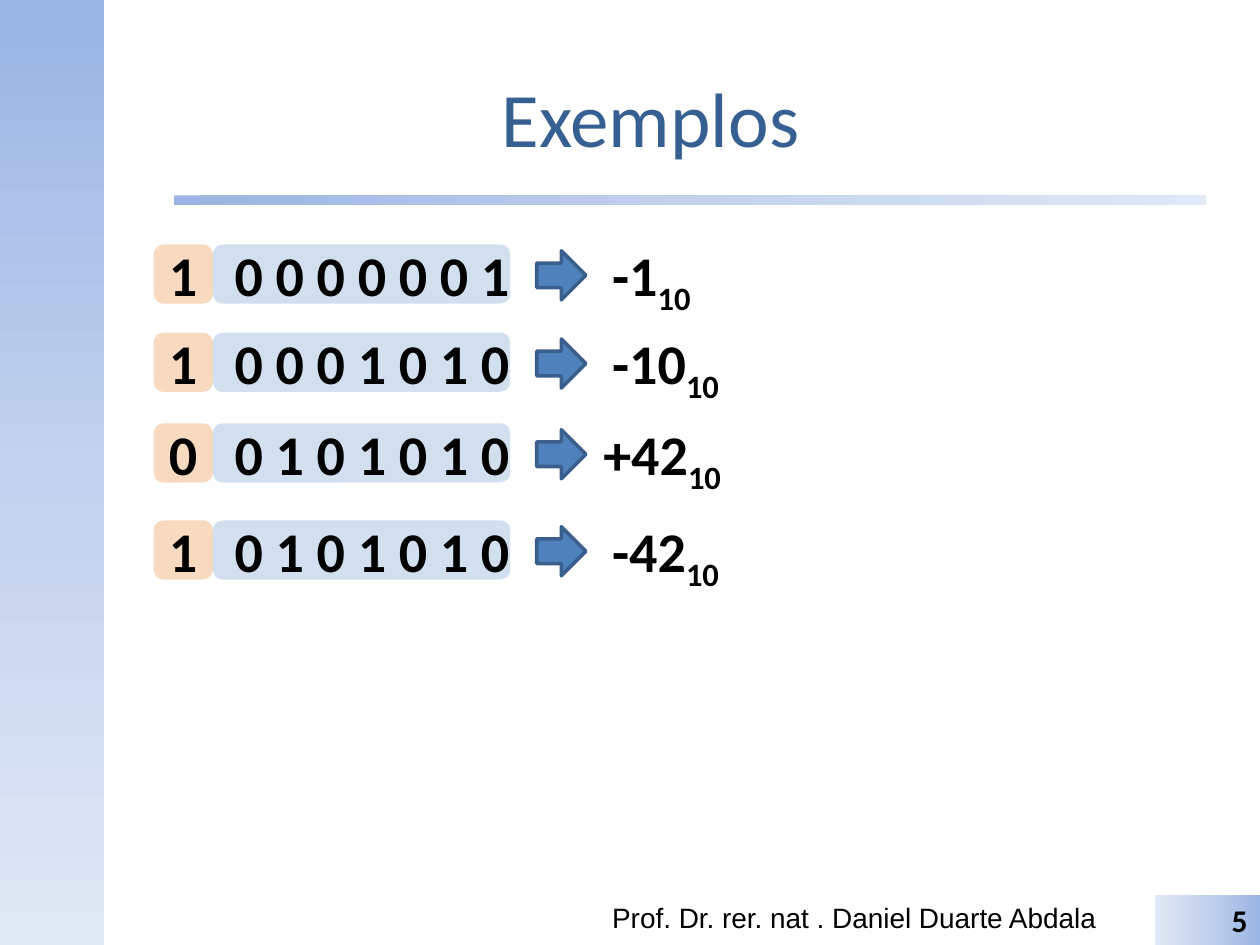
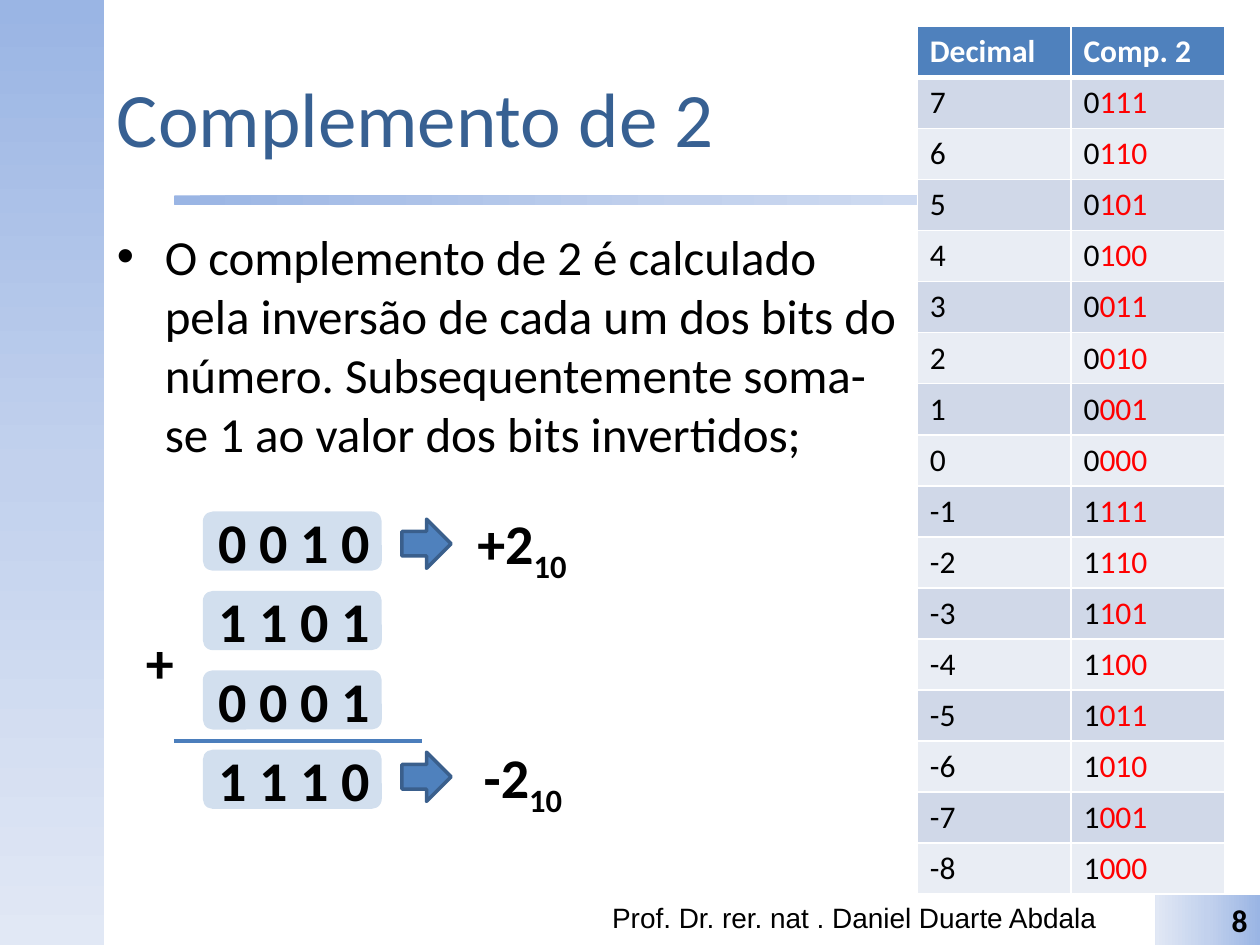
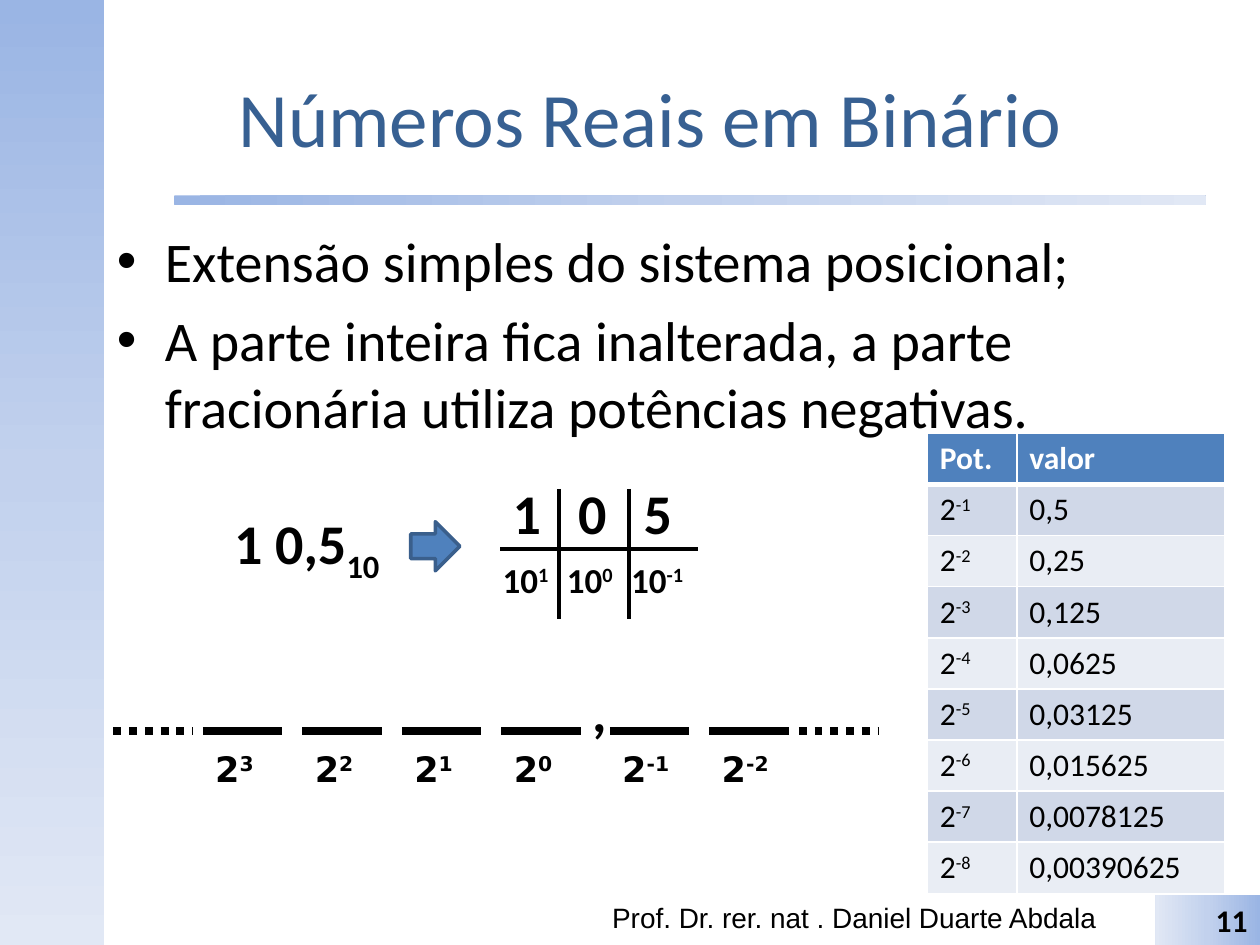
from collections import namedtuple
from dataclasses import dataclass

from pptx import Presentation
from pptx.dml.color import RGBColor as RGB
from pptx.enum.dml import MSO_LINE as Dash
from pptx.enum.shapes import MSO_CONNECTOR as Link, MSO_SHAPE as Form
from pptx.enum.text import MSO_ANCHOR as Anchor, PP_ALIGN as Align
from pptx.oxml import parse_xml
from pptx.oxml.ns import nsdecls, qn
from pptx.util import Inches, Pt

Box = namedtuple("Box", "left top width height")
Style = namedtuple("Style", "size color bold font", defaults=("000000", False, "Calibri"))
Piece = namedtuple("Piece", "text baseline color", defaults=(0, None))


@dataclass(frozen=True)
class Theme:
    gradient: tuple = ((0, "9AB5E4"), (50, "C2D1ED"), (100, "E1E8F5"))
    accent: str = "4F81BD"
    arrow_edge: str = "3A5F8C"
    sum_line: str = "4B7EBC"
    sign: str = "E46C0A"
    black: str = "000000"
    white: str = "FFFFFF"
    red: str = "FF0000"
    stripes: tuple = ("D0D8E8", "E9EDF4")
    title: Style = Style(44, "376092")
    body: Style = Style(32)
    body_small: Style = Style(28)
    digits: Style = Style(32, bold=True)
    powers: Style = Style(20, bold=True)
    places: Style = Style(20, bold=True, font="DejaVu Sans")
    number: Style = Style(18, bold=True)
    header: Style = Style(18, "FFFFFF", True)
    cell: Style = Style(18)
    footer: Style = Style(16, font="Arial")


THEME = Theme()
FOOTER = "Prof. Dr. rer. nat . Daniel Duarte Abdala"
SUB, SUPER = -25, 30


# Text and shape helpers

def inches(box):
    return [Inches(value) for value in box]


def write(para, content, style):
    """Fill a paragraph with a string or with a list of pieces."""
    pieces = [Piece(content)] if isinstance(content, str) else content
    for piece in pieces:
        span = para.add_run()
        span.text = piece.text
        span.font.name, span.font.size = style.font, Pt(style.size)
        span.font.bold = style.bold
        span.font.color.rgb = RGB.from_string(piece.color or style.color)
        if piece.baseline:
            span._r.get_or_add_rPr().set("baseline", str(piece.baseline * 1000))


def power(base, exponent):
    return [Piece(base), Piece(exponent, SUPER)]


def add_text(page, box, content, style, align=Align.LEFT, anchor=Anchor.TOP, wrap=True):
    frame = page.shapes.add_textbox(*inches(box)).text_frame
    frame.word_wrap, frame.vertical_anchor = wrap, anchor
    para = frame.paragraphs[0]
    para.alignment = align
    write(para, content, style)


def add_form(page, form, box, color=None, edge=None):
    shape = page.shapes.add_shape(form, *inches(box))
    shape.shadow.inherit = False
    if color:
        shape.fill.solid()
        shape.fill.fore_color.rgb = RGB.from_string(color)
    if edge:
        shape.line.color.rgb = RGB.from_string(edge)
        shape.line.width = Pt(2)
    else:
        shape.line.fill.background()
    return shape


def add_band(page, form, box, angle):
    shape = add_form(page, form, box)
    shape.fill.background()
    stops = "".join(f'<a:gs pos="{place * 1000}"><a:srgbClr val="{color}"/></a:gs>'
                    for place, color in THEME.gradient)
    properties = shape._element.spPr
    properties.replace(properties.find(qn("a:noFill")), parse_xml(
        f'<a:gradFill {nsdecls("a")} rotWithShape="1"><a:gsLst>{stops}</a:gsLst>'
        f'<a:lin ang="{angle * 60000}" scaled="0"/></a:gradFill>'))
    return shape


def add_line(page, start, end, color, width, dash=None):
    line = page.shapes.add_connector(Link.STRAIGHT, *inches(start + end))
    line.line.color.rgb = RGB.from_string(color)
    line.line.width = Pt(width)
    if dash:
        line.line.dash_style = dash
    line._element.spPr.append(parse_xml(f'<a:effectLst {nsdecls("a")}/>'))


def add_bits(page, box, bits, color, inset=0.1):
    """A pale rounded box that holds binary digits."""
    shape = add_form(page, Form.ROUNDED_RECTANGLE, box, color)
    tint = shape._element.spPr.find(qn("a:solidFill"))[0]
    tint.append(parse_xml(f'<a:alpha {nsdecls("a")} val="25000"/>'))
    frame = shape.text_frame
    frame.word_wrap, frame.vertical_anchor = False, Anchor.MIDDLE
    frame.margin_left = Inches(inset)
    frame.margin_right = frame.margin_top = frame.margin_bottom = 0
    frame.paragraphs[0].alignment = Align.LEFT
    write(frame.paragraphs[0], bits, THEME.digits)


def add_arrow(page, left, top):
    add_form(page, Form.RIGHT_ARROW, Box(left, top, 0.39, 0.39), THEME.accent, THEME.arrow_edge)


def add_reading(page, left, top, value, gap):
    """An arrow followed by a value in base 10."""
    add_arrow(page, left, top)
    add_text(page, Box(left + gap, top - 0.13, 1.26, 0.64),
             [Piece(value), Piece("10", SUB)], THEME.digits)


# Regions shared by the slides

def add_page(deck, title, number, title_width=8.67, align=Align.CENTER):
    page = deck.slides.add_slide(deck.slide_layouts[6])
    add_band(page, Form.RECTANGLE, Box(0, 0, 0.83, 7.5), 90)
    add_band(page, Form.ROUNDED_RECTANGLE, Box(1.38, 1.55, 8.19, 0.08), 0)
    add_text(page, Box(0.83, 0.3, title_width, 1.25), title, THEME.title, align, Anchor.MIDDLE)
    add_text(page, Box(4.76, 7.1, 4.19, 0.4), FOOTER, THEME.footer)
    tab = add_band(page, Form.RECTANGLE, Box(9.17, 7.1, 0.83, 0.4), 180)
    frame = tab.text_frame
    frame.vertical_anchor = Anchor.TOP
    frame.paragraphs[0].alignment = Align.RIGHT
    write(frame.paragraphs[0], str(number), THEME.number)
    return page


def add_bullets(page, box, items, style):
    frame = page.shapes.add_textbox(*inches(box)).text_frame
    frame.word_wrap = True
    for index, item in enumerate(items):
        para = frame.add_paragraph() if index else frame.paragraphs[0]
        para.space_before = Pt(style.size * 0.2)
        write(para, item, style)
        properties = para._p.get_or_add_pPr()
        properties.set("marL", str(Inches(0.38)))
        properties.set("indent", str(-Inches(0.38)))
        properties.append(parse_xml(f'<a:buFont {nsdecls("a")} typeface="Arial"/>'))
        properties.append(parse_xml(f'<a:buChar {nsdecls("a")} char="•"/>'))


def style_cell(cell, fill, top, bottom):
    properties = cell._tc.get_or_add_tcPr()
    for side, width in (("L", 1), ("R", 1), ("T", top), ("B", bottom)):
        properties.append(parse_xml(
            f'<a:ln{side} {nsdecls("a")} w="{Pt(width)}"><a:solidFill>'
            f'<a:srgbClr val="{THEME.white}"/></a:solidFill></a:ln{side}>'))
    cell.fill.solid()
    cell.fill.fore_color.rgb = RGB.from_string(fill)


def add_striped_table(page, box, widths, rows):
    table = page.shapes.add_table(len(rows), len(widths), *inches(box)).table
    for column, width in zip(table.columns, widths):
        column.width = Inches(width)
    for index, row in enumerate(rows):
        table.rows[index].height = Inches(box.height / len(rows))
        fill = THEME.stripes[(index - 1) % 2] if index else THEME.accent
        for cell, content in zip(table.rows[index].cells, row):
            style_cell(cell, fill, 3 if index == 1 else 1, 1 if index else 3)
            write(cell.text_frame.paragraphs[0], content, THEME.cell if index else THEME.header)


# Regions of single slides

def add_signed_number(page, left, top, bits, value):
    """Sign bit, magnitude bits and the decimal reading."""
    add_bits(page, Box(left, top, 0.47, 0.47), bits[0], THEME.sign)
    add_bits(page, Box(left + 0.47, top, 2.36, 0.47), " ".join(bits[1:]), THEME.accent, 0.15)
    gap = 0.43 if value.startswith("+") else 0.5
    add_reading(page, left + 3.04, top + 0.05, value, gap)


def add_complement_sum(page, left, top):
    """Number, inverted bits, one, and their sum."""
    pitch = 0.63
    for index, bits in enumerate(("0010", "1101", "0001", "1110")):
        add_bits(page, Box(left, top + index * pitch, 1.42, 0.47), " ".join(bits), THEME.accent)
    add_reading(page, left + 1.58, top + 0.06, "+2", 0.5)
    add_reading(page, left + 1.58, top + 1.91, "-2", 0.55)
    add_text(page, Box(left - 0.55, top + 0.87, 0.43, 0.64), "+", THEME.digits, wrap=False)
    add_line(page, (left - 0.23, top + 1.82), (left + 1.74, top + 1.82), THEME.sum_line, 2.25)


def add_decimal_split(page, left, top):
    """A decimal number taken apart into digits and powers of ten."""
    add_text(page, Box(left, top + 0.24, 1.42, 0.64),
             [Piece("1 0,5"), Piece("10", SUB)], THEME.digits)
    add_arrow(page, left + 1.5, top + 0.39)
    grid = left + 2.21
    for offset in (0.47, 1.02):
        add_line(page, (grid + offset, top + 0.13), (grid + offset, top + 1.16), THEME.black, 2.25)
    add_line(page, (grid, top + 0.61), (grid + 1.57, top + 0.61), THEME.black, 2.25)
    for index, (digit, exponent) in enumerate((("1", "1"), ("0", "0"), ("5", "-1"))):
        add_text(page, Box(grid + index * 0.52, top, 0.5, 0.64), digit, THEME.digits)
        add_text(page, Box(grid - 0.08 + index * 0.51, top + 0.63, 0.75, 0.44),
                 power("10", exponent), THEME.powers)


def add_place_values(page, left, top):
    """Digit places on both sides of the comma, with their powers of two."""
    dash_width, pitch = 0.63, 0.79
    whole, fraction = left + 0.71, left + 3.94
    places = [(whole + index * pitch, str(3 - index)) for index in range(4)]
    places += [(fraction + index * pitch, str(-1 - index)) for index in range(2)]
    for start, exponent in places:
        add_line(page, (start, top), (start + dash_width, top), THEME.black, 4.5)
        add_text(page, Box(start, top + 0.08, 0.9, 0.44), power("2", exponent), THEME.places)
    for start in (left, left + 5.44):
        add_line(page, (start, top), (start + dash_width, top), THEME.black, 4.5, Dash.ROUND_DOT)
    add_text(page, Box(left + 3.7, top - 0.48, 0.32, 0.64), ",", THEME.digits, wrap=False)


# Slides

def build_examples(deck):
    page = add_page(deck, "Exemplos", 5)
    for top, bits, value in ((1.94, "10000001", "-1"), (2.64, "10001010", "-10"),
                             (3.36, "00101010", "+42"), (4.13, "10101010", "-42")):
        add_signed_number(page, 1.22, top, bits, value)


def build_complement(deck):
    page = add_page(deck, "Complemento de 2", 8, 6.22, Align.LEFT)
    add_bullets(page, Box(0.83, 1.75, 6.46, 2.16), [
        "O complemento de 2 é calculado pela inversão de cada um dos bits do número. "
        "Subsequentemente soma-se 1 ao valor dos bits invertidos;"], THEME.body_small)
    rows = [("Decimal", "Comp. 2")]
    for value in range(7, -9, -1):
        bits = f"{value % 16:04b}"
        rows.append((str(value), [Piece(bits[0]), Piece(bits[1:], color=THEME.red)]))
    add_striped_table(page, Box(7.28, 0.21, 2.44, 6.89), (1.22, 1.22), rows)
    add_complement_sum(page, 1.61, 4.06)


def build_real_numbers(deck):
    page = add_page(deck, "Números Reais em Binário", 11)
    add_bullets(page, Box(0.83, 1.75, 8.67, 1.76), [
        "Extensão simples do sistema posicional;",
        "A parte inteira fica inalterada, a parte fracionária utiliza potências negativas.",
    ], THEME.body)
    rows = [("Pot.", "valor")]
    for exponent in range(1, 9):
        value = f"{2 ** -exponent:.{exponent}f}".replace(".", ",")
        rows.append((power("2", str(-exponent)), value))
    add_striped_table(page, Box(7.36, 3.44, 2.36, 3.65), (0.71, 1.65), rows)
    add_place_values(page, 0.9, 5.8)
    add_decimal_split(page, 1.76, 3.75)


def main():
    deck = Presentation()
    deck.slide_width, deck.slide_height = Inches(10), Inches(7.5)
    build_examples(deck)
    build_complement(deck)
    build_real_numbers(deck)
    deck.save("out.pptx")


if __name__ == "__main__":
    main()
